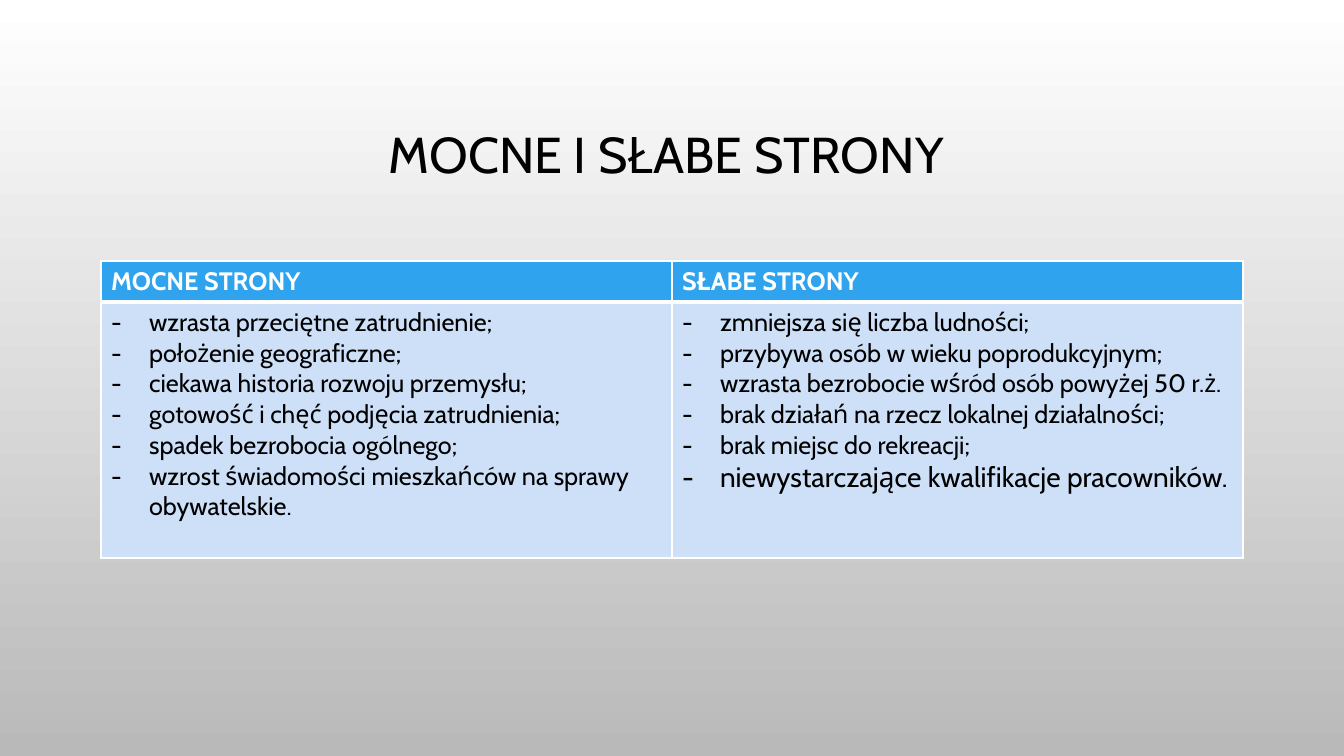
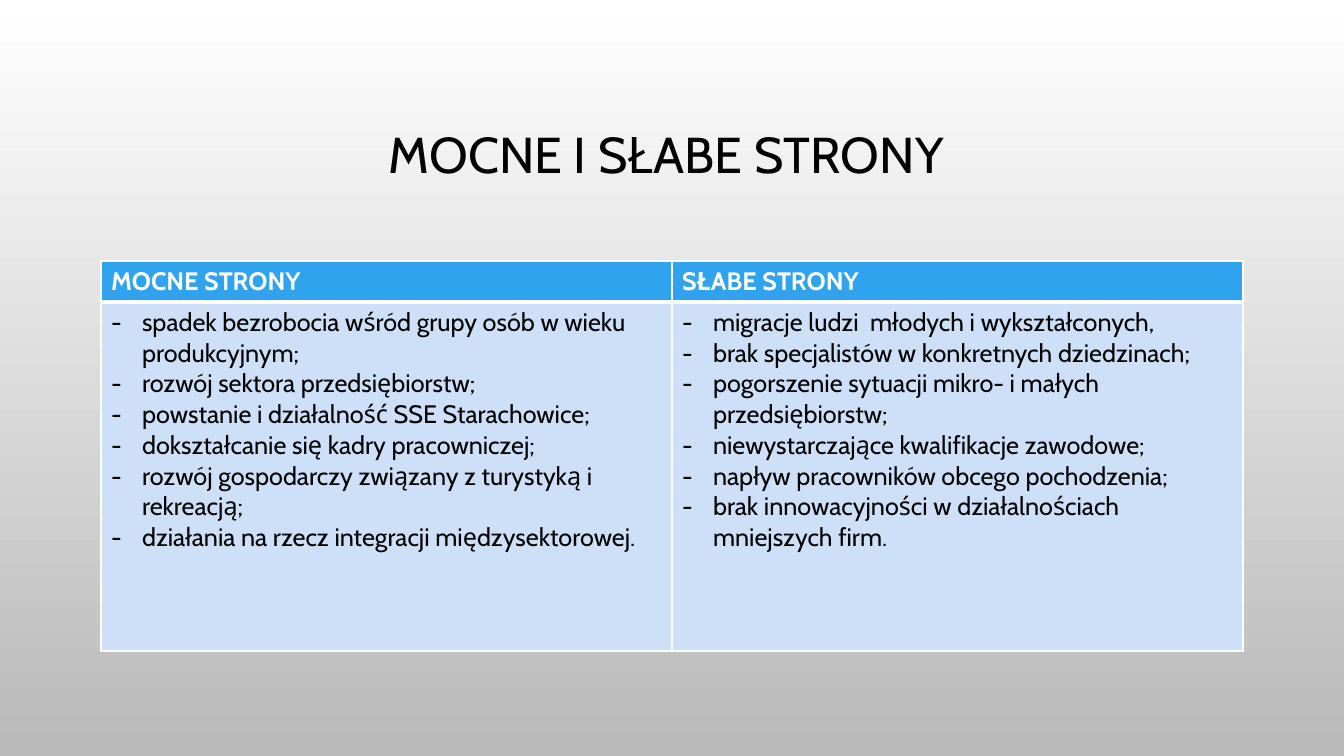
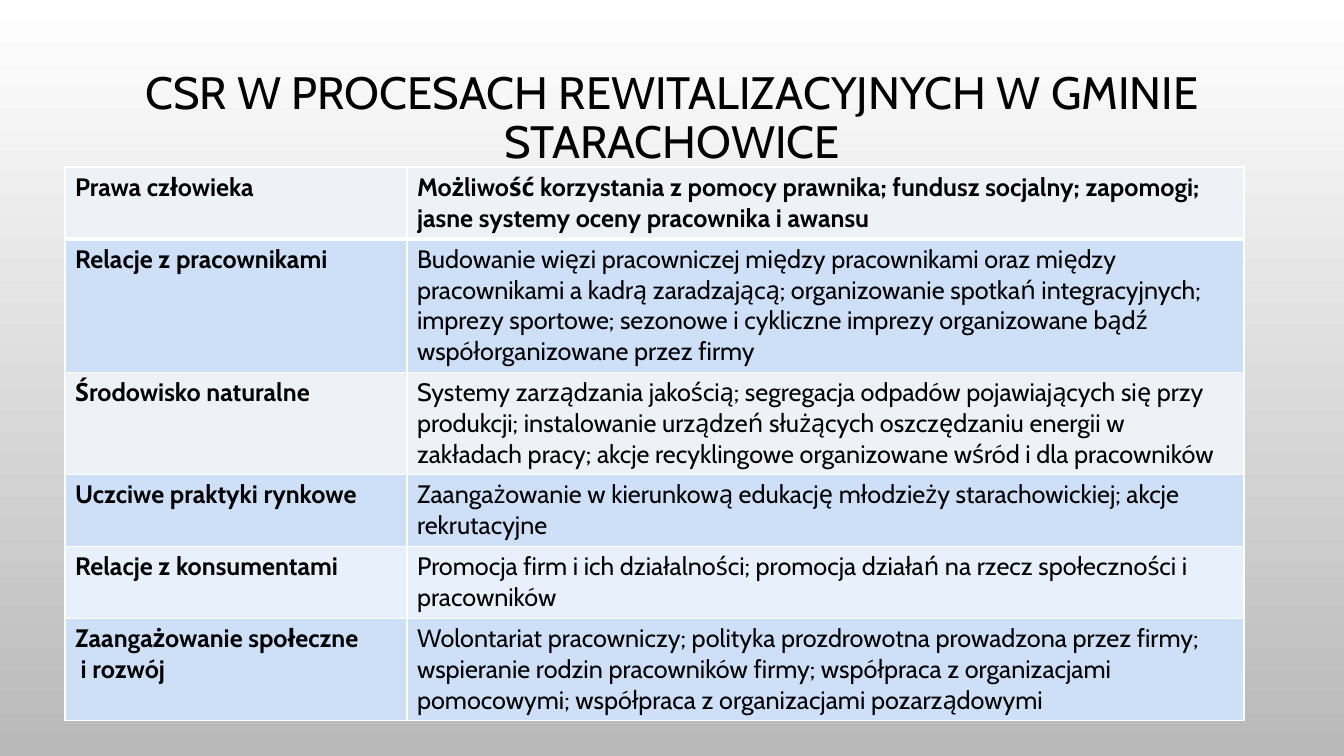
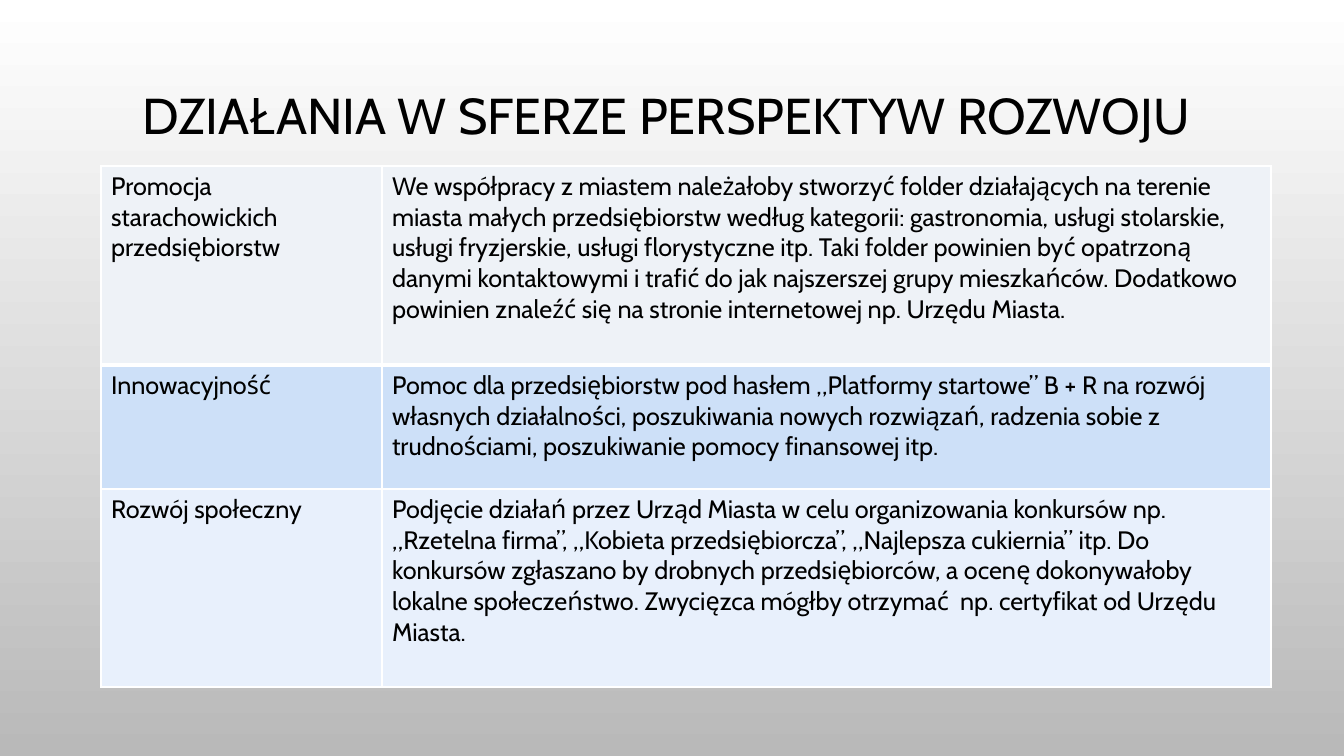
"""Build four slides on strengths, weaknesses and CSR actions in Starachowice."""
import lxml.etree
import pptx
import pptx.dml.color
import pptx.enum.text
import pptx.oxml.ns
import pptx.util

EMU_PER_PX = 914400 / 100.8
FONT = "Cabin"
COLORS = {
    "page_top": "FFFFFF",
    "page_bottom": "B9B9B9",
    "text": "000000",
    "border": "FFFFFF",
    "header_text": "FFFFFF",
    "header": "2FA3EE",
    "blue": "CDE0F8",
    "gray": "EEF2F7",
    "pale": "E8F0FC",
}
SWOT_TITLE = "MOCNE I SŁABE STRONY "
SWOT_HEADER = ("MOCNE STRONY", "SŁABE STRONY")

SOCIAL_STRENGTHS = """wzrasta przeciętne zatrudnienie;
położenie geograficzne;
ciekawa historia rozwoju przemysłu;
gotowość i chęć podjęcia zatrudnienia;
spadek bezrobocia ogólnego;
wzrost świadomości mieszkańców na sprawy obywatelskie."""
SOCIAL_WEAKNESSES = """zmniejsza się liczba ludności;
przybywa osób w wieku poprodukcyjnym;
wzrasta bezrobocie wśród osób powyżej 50 r.ż.
brak działań na rzecz lokalnej działalności;
brak miejsc do rekreacji;
niewystarczające kwalifikacje pracowników."""
ECONOMIC_STRENGTHS = """spadek bezrobocia wśród grupy osób w wieku produkcyjnym;
rozwój sektora przedsiębiorstw;
powstanie i działalność SSE Starachowice;
dokształcanie się kadry pracowniczej;
rozwój gospodarczy związany z turystyką i rekreacją;
działania na rzecz integracji międzysektorowej."""
ECONOMIC_WEAKNESSES = """migracje ludzi  młodych i wykształconych,
brak specjalistów w konkretnych dziedzinach;
pogorszenie sytuacji mikro- i małych przedsiębiorstw;
niewystarczające kwalifikacje zawodowe;
napływ pracowników obcego pochodzenia;
brak innowacyjności w działalnościach mniejszych firm."""

CSR_AREAS = [
    ("Prawa człowieka",
     "Możliwość korzystania z pomocy prawnika; fundusz socjalny; zapomogi; "
     "jasne systemy oceny pracownika i awansu"),
    ("Relacje z pracownikami",
     "Budowanie więzi pracowniczej między pracownikami oraz między pracownikami "
     "a kadrą zaradzającą; organizowanie spotkań integracyjnych; imprezy sportowe; "
     "sezonowe i cykliczne imprezy organizowane bądź współorganizowane przez firmy"),
    ("Środowisko naturalne",
     "Systemy zarządzania jakością; segregacja odpadów pojawiających się przy "
     "produkcji; instalowanie urządzeń służących oszczędzaniu energii w zakładach "
     "pracy; akcje recyklingowe organizowane wśród i dla pracowników"),
    ("Uczciwe praktyki rynkowe",
     "Zaangażowanie w kierunkową edukację młodzieży starachowickiej; "
     "akcje rekrutacyjne"),
    ("Relacje z konsumentami",
     "Promocja firm i ich działalności; promocja działań na rzecz społeczności "
     "i pracowników"),
    ("Zaangażowanie społeczne\n i rozwój",
     "Wolontariat pracowniczy; polityka prozdrowotna prowadzona przez firmy; "
     "wspieranie rodzin pracowników firmy; współpraca z organizacjami pomocowymi; "
     "współpraca z organizacjami pozarządowymi"),
]
GROWTH_ACTIONS = [
    ("Promocja starachowickich przedsiębiorstw",
     "We współpracy z miastem należałoby stworzyć folder działających na terenie "
     "miasta małych przedsiębiorstw według kategorii: gastronomia, usługi stolarskie, "
     "usługi fryzjerskie, usługi florystyczne itp. Taki folder powinien być opatrzoną "
     "danymi kontaktowymi i trafić do jak najszerszej grupy mieszkańców. Dodatkowo "
     "powinien znaleźć się na stronie internetowej np. Urzędu Miasta."),
    ("Innowacyjność",
     "Pomoc dla przedsiębiorstw pod hasłem „Platformy startowe” B + R na rozwój "
     "własnych działalności, poszukiwania nowych rozwiązań, radzenia sobie z "
     "trudnościami, poszukiwanie pomocy finansowej itp."),
    ("Rozwój społeczny",
     "Podjęcie działań przez Urząd Miasta w celu organizowania konkursów np. "
     "„Rzetelna firma”, „Kobieta przedsiębiorcza”, „Najlepsza cukiernia” itp. Do "
     "konkursów zgłaszano by drobnych przedsiębiorców, a ocenę dokonywałoby lokalne "
     "społeczeństwo. Zwycięzca mógłby otrzymać  np. certyfikat od Urzędu Miasta."),
]


def px(length):
    """Turn pixels into EMU."""
    return pptx.util.Emu(round(length * EMU_PER_PX))


def rgb(name):
    """Look up a colour of the palette."""
    return pptx.dml.color.RGBColor.from_string(COLORS[name])


def format_runs(paragraph, size, color="text", bold=False):
    """Give every run of a paragraph the shared font."""
    for run in paragraph.runs:
        run.font.name = FONT
        run.font.size = pptx.util.Pt(size)
        run.font.bold = bold
        run.font.color.rgb = rgb(color)


def paint_background(master):
    """Fade the page from white down to gray."""
    fill = master.background.fill
    fill.gradient()
    fill.gradient_angle = 270
    for stop, position, color in zip(fill.gradient_stops, (0, 1), ("page_top", "page_bottom")):
        stop.position = position
        stop.color.rgb = rgb(color)


def add_titled_slide(deck, heading, height, size=36):
    """Add a slide with a centred title of the given height."""
    slide = deck.slides.add_slide(deck.slide_layouts[5])
    title = slide.shapes.title
    title.left, title.top, title.width, title.height = px(101), px(69), px(1142), px(height)
    frame = title.text_frame
    frame.text = heading
    frame.word_wrap = True
    frame.auto_size = pptx.enum.text.MSO_AUTO_SIZE.NONE
    frame.vertical_anchor = pptx.enum.text.MSO_ANCHOR.MIDDLE
    paragraph = frame.paragraphs[0]
    paragraph.alignment = pptx.enum.text.PP_ALIGN.CENTER
    paragraph.line_spacing = 0.9
    format_runs(paragraph, size)
    return slide


def add_dash(paragraph, hang):
    """Hang a paragraph on a dash bullet."""
    properties = paragraph._p.get_or_add_pPr()
    properties.set("marL", str(px(hang)))
    properties.set("indent", str(-px(hang)))
    for tag, key, value in (("a:buFont", "typeface", FONT), ("a:buChar", "char", "-")):
        lxml.etree.SubElement(properties, pptx.oxml.ns.qn(tag)).set(key, value)


def add_borders(cell, top, bottom):
    """Draw white cell borders, with the top and bottom widths in points."""
    properties = cell._tc.get_or_add_tcPr()
    for index, (side, points) in enumerate((("L", 1), ("R", 1), ("T", top), ("B", bottom))):
        line = lxml.etree.Element(pptx.oxml.ns.qn("a:ln" + side), w=str(pptx.util.Pt(points)))
        solid = lxml.etree.SubElement(line, pptx.oxml.ns.qn("a:solidFill"))
        lxml.etree.SubElement(solid, pptx.oxml.ns.qn("a:srgbClr"), val=COLORS["border"])
        properties.insert(index, line)


def fill_cell(cell, text, fill, color="text", bold=False, hang=0):
    """Write and colour one cell, with dash bullets if it hangs."""
    cell.fill.solid()
    cell.fill.fore_color.rgb = rgb(fill)
    cell.text_frame.text = text
    for paragraph in cell.text_frame.paragraphs:
        if hang:
            add_dash(paragraph, hang)
        format_runs(paragraph, 18, color, bold)


def add_grid(slide, left, top, widths, heights):
    """Add a bordered table with a thick rule under its first row."""
    table = slide.shapes.add_table(len(heights), len(widths), px(left), px(top),
                                   px(sum(widths)), px(sum(heights))).table
    table.horz_banding = False
    for column, width in zip(table.columns, widths):
        column.width = px(width)
    for index, (row, height) in enumerate(zip(table.rows, heights)):
        row.height = px(height)
        for cell in row.cells:
            add_borders(cell, top=3 if index == 1 else 1, bottom=3 if index == 0 else 1)
    return table


def add_swot_slide(deck, lists, list_height, hang):
    """Add a slide that sets strengths beside weaknesses."""
    slide = add_titled_slide(deck, SWOT_TITLE, 176)
    table = add_grid(slide, 101, 261, (571, 571), (41, list_height))
    for column, (header, items) in enumerate(zip(SWOT_HEADER, lists)):
        fill_cell(table.cell(0, column), header, "header", "header_text", bold=True)
        fill_cell(table.cell(1, column), items, "blue", hang=hang)
    return table


def fill_topics(table, topics, fills, emphasis=False):
    """Write topic rows, with bold first row and column if emphasised."""
    table.first_row = False
    for row, (texts, fill) in enumerate(zip(topics, fills)):
        for column, text in enumerate(texts):
            fill_cell(table.cell(row, column), text, fill,
                      bold=emphasis and 0 in (row, column))


def main():
    """Build and save the deck."""
    deck = pptx.Presentation()
    deck.slide_width, deck.slide_height = px(1344), px(756)
    paint_background(deck.slide_master)

    social = add_swot_slide(deck, (SOCIAL_STRENGTHS, SOCIAL_WEAKNESSES), 256, hang=38)
    format_runs(social.cell(1, 1).text_frame.paragraphs[-1], 20)
    add_swot_slide(deck, (ECONOMIC_STRENGTHS, ECONOMIC_WEAKNESSES), 349, hang=31)

    csr = add_titled_slide(deck, "CSR W PROCESACH REWITALIZACYJNYCH W GMINIE STARACHOWICE",
                           100, size=32.4)
    areas = add_grid(csr, 65, 167, (342, 837), (72, 133, 102, 72, 72, 102))
    fill_topics(areas, CSR_AREAS, ("gray", "blue", "gray", "blue", "pale", "blue"),
                emphasis=True)

    growth = add_titled_slide(deck, "DZIAŁANIA W SFERZE PERSPEKTYW ROZWOJU ", 98)
    actions = add_grid(growth, 101, 166, (281, 889), (199, 124, 198))
    fill_topics(actions, GROWTH_ACTIONS, ("gray", "blue", "pale"))

    deck.save("out.pptx")


if __name__ == "__main__":
    main()
